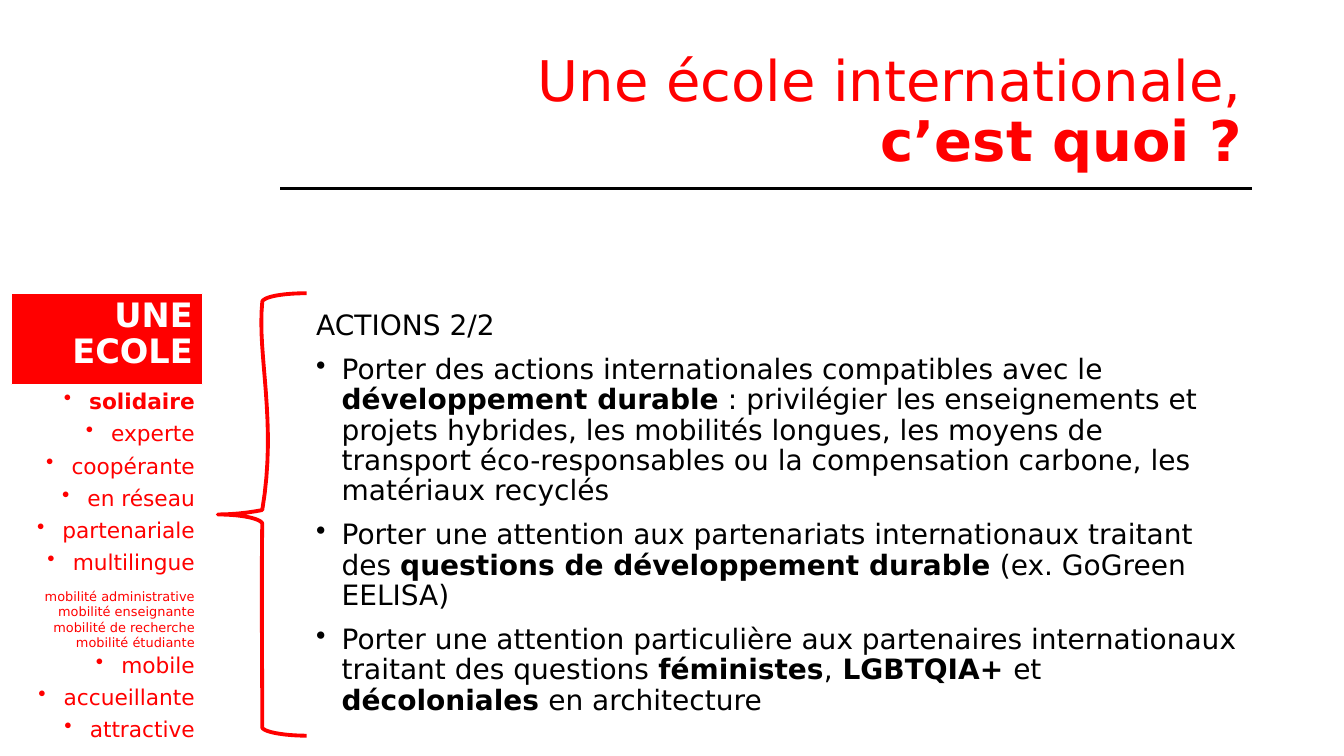
from lxml import etree
from pptx import Presentation
from pptx.dml.color import RGBColor
from pptx.enum.shapes import MSO_CONNECTOR, MSO_SHAPE
from pptx.enum.text import MSO_ANCHOR, MSO_AUTO_SIZE, PP_ALIGN
from pptx.oxml.ns import qn
from pptx.util import Cm, Pt

RED = RGBColor(0xFF, 0, 0)
BLACK = RGBColor(0, 0, 0)
WHITE = RGBColor(0xFF, 0xFF, 0xFF)
FONT = "DejaVu Sans"
LEFT, RIGHT = PP_ALIGN.LEFT, PP_ALIGN.RIGHT
TOP, MIDDLE = MSO_ANCHOR.TOP, MSO_ANCHOR.MIDDLE
FIXED = MSO_AUTO_SIZE.NONE
LINE, RECT = MSO_CONNECTOR.STRAIGHT, MSO_SHAPE.RECTANGLE
TITLE_ONLY = 5

TITLE = "Une école internationale,\v*c’est quoi ?*"
TRAITS = ["*solidaire*", "experte", "coopérante", "en réseau", "partenariale",
          "multilingue"]
MOVES = ["mobilité administrative", "mobilité enseignante",
         "mobilité de recherche", "mobilité étudiante"]
MORE = ["mobile", "accueillante", "attractive"]
ACTIONS = [
    "Porter des actions internationales compatibles avec le *développement "
    "durable* : privilégier les enseignements et projets hybrides, les "
    "mobilités longues, les moyens de transport éco-responsables ou la "
    "compensation carbone, les matériaux recyclés",
    "Porter une attention aux partenariats internationaux traitant des "
    "*questions de développement durable* (ex. GoGreen EELISA)",
    "Porter une attention particulière aux partenaires internationaux "
    "traitant des questions *féministes*,* LGBTQIA+ *et *décoloniales* "
    "en architecture",
]
# Each curve: two control points and an end, as shares of the box.
BRACE = [
    [(0.72, 1), (0.49, 0.99), (0.5, 0.98)],
    [(0.5, 0.82), (0.49, 0.67), (0.5, 0.52)],
    [(0.48, 0.51), (0.28, 0.5), (0, 0.5)],
    [(0.27, 0.5), (0.5, 0.49), (0.5, 0.49)],
    [(0.67, 0.29), (0.44, 0.14), (0.5, 0.02)],
    [(0.5, 0.01), (0.69, 0), (1, 0)],
]
STEPS = 16


def write(frame, text, size, color, align=LEFT, lead=1.0, before=0, bullet=False):
    """Add one paragraph; stars switch bold on and off."""
    par = frame.paragraphs[0]
    if par.runs:
        par = frame.add_paragraph()
    else:
        before = 0
    if bullet:
        props = par._p.get_or_add_pPr()
        props.set("marL", str(Cm(0.64)))
        props.set("indent", str(-Cm(0.64)))
        etree.SubElement(props, qn("a:buChar")).set("char", "•")
    par.alignment, par.line_spacing, par.space_before = align, lead, Pt(before)
    for spot, part in enumerate(text.split("*")):
        for row, piece in enumerate(part.split("\v")):
            if row:
                par.add_line_break()
            if piece:
                run = par.add_run()
                run.text = piece
                font = run.font
                font.name, font.size, font.bold = FONT, Pt(size), spot % 2 == 1
                font.color.rgb = color


def set_frame(shape, anchor=TOP):
    frame = shape.text_frame
    frame.word_wrap, frame.auto_size = True, FIXED
    frame.vertical_anchor = anchor
    return frame


def add_title(slide, x, y, w, h):
    title = slide.shapes.title
    title.left, title.top, title.width, title.height = x, y, w, h
    write(set_frame(title, MIDDLE), TITLE, 40, RED, RIGHT, 0.9)
    base = y + h + Cm(0.05)
    rule = slide.shapes.add_connector(LINE, x, base, x + w, base)
    rule.line.color.rgb, rule.line.width = BLACK, Pt(1.5)
    etree.SubElement(rule._element.spPr, qn("a:effectLst"))


def add_label(slide, x, y, w, h):
    label = slide.shapes.add_shape(RECT, x, y, w, h)
    label.shadow.inherit = False
    label.fill.solid()
    label.fill.fore_color.rgb = RED
    label.line.color.rgb, label.line.width = WHITE, Pt(0.75)
    frame = set_frame(label)
    for word in ("*UNE*", "*ECOLE*"):
        write(frame, word, 24, WHITE, RIGHT, 0.9)


def add_traits(slide, x, y, w, h):
    frame = set_frame(slide.shapes.add_textbox(x, y, w, h))
    for text in TRAITS:
        write(frame, text, 15.5, RED, RIGHT, 0.7, 10, True)
    for rank, text in enumerate(MOVES):
        write(frame, text, 9.2, RED, RIGHT, before=0 if rank else 10)
    for rank, text in enumerate(MORE):
        write(frame, text, 15.5, RED, RIGHT, 0.7, 10 if rank else 6, True)


def add_actions(slide, x, y, w, h):
    frame = set_frame(slide.shapes.add_textbox(x, y, w, h), MIDDLE)
    write(frame, "ACTIONS 2/2", 20, BLACK, lead=0.9)
    for text in ACTIONS:
        write(frame, text, 20, BLACK, lead=0.9, before=10, bullet=True)


def bezier(a, b, c, d, t):
    u = 1 - t
    return u**3 * a + 3 * u * u * t * b + 3 * u * t * t * c + t**3 * d


def add_brace(slide, x, y, w, h):
    start, dots = (1, 1), []
    for curve in BRACE:
        axes = list(zip(start, *curve))
        for step in range(1, STEPS + 1):
            px, py = (bezier(*axis, step / STEPS) for axis in axes)
            dots.append((round(x + px * w), round(y + py * h)))
        start = curve[-1]
    pen = slide.shapes.build_freeform(x + w, y + h)
    pen.add_line_segments(dots, close=False)
    brace = pen.convert_to_shape()
    brace.shadow.inherit = False
    brace.fill.background()
    brace.line.color.rgb, brace.line.width = RED, Pt(2.75)


def main():
    deck = Presentation()
    deck.slide_width, deck.slide_height = Cm(33.87), Cm(19.05)
    slide = deck.slides.add_slide(deck.slide_layouts[TITLE_ONLY])
    add_title(slide, Cm(7.06), Cm(1.02), Cm(24.49), Cm(3.68))
    add_traits(slide, Cm(0.08), Cm(9.83), Cm(5.08), Cm(9.12))
    add_label(slide, Cm(0.28), Cm(7.39), Cm(4.83), Cm(2.31))
    add_actions(slide, Cm(7.72), Cm(7.37), Cm(23.83), Cm(11.15))
    add_brace(slide, Cm(5.49), Cm(7.39), Cm(2.24), Cm(11.15))
    deck.save("out.pptx")


if __name__ == "__main__":
    main()
